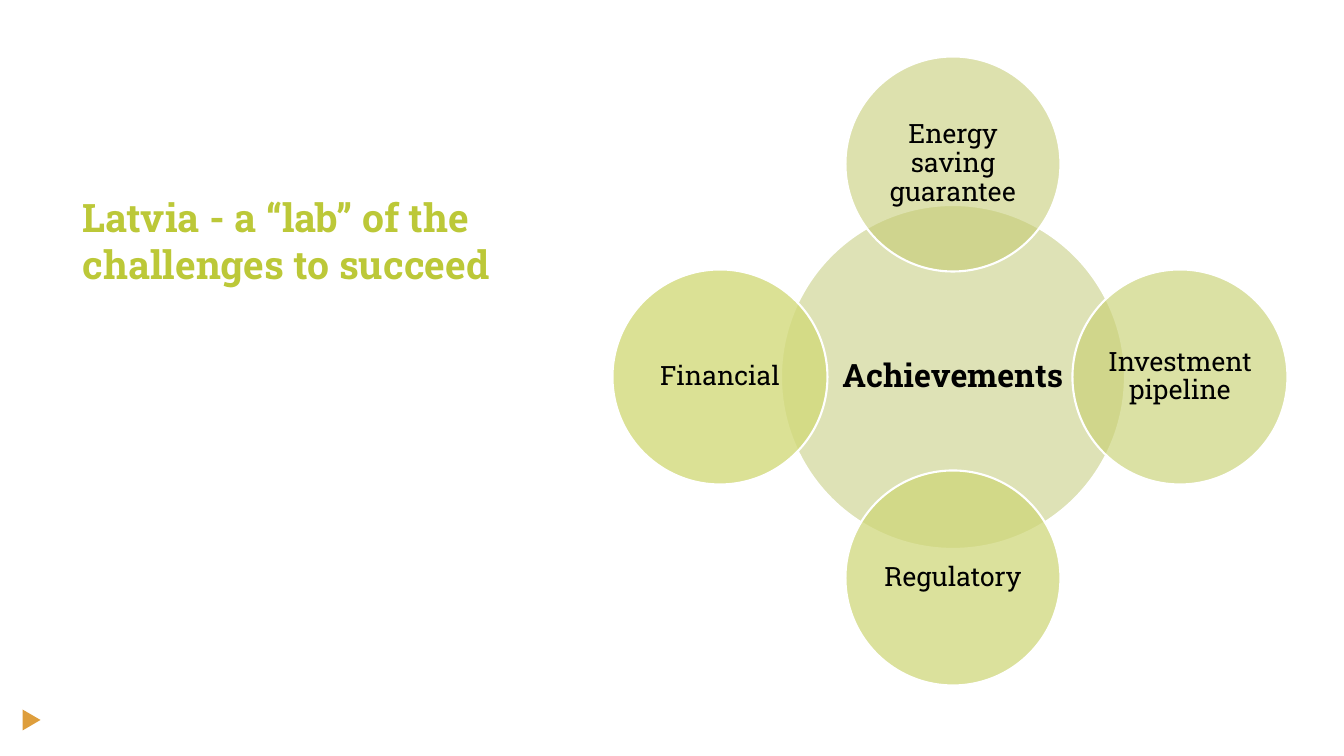
from pptx import Presentation
from pptx.dml.color import RGBColor as RGB
from pptx.enum.shapes import MSO_SHAPE as Geo
from pptx.enum.text import MSO_ANCHOR as Anchor, PP_ALIGN as Align
from pptx.util import Emu, Pt
from lxml.etree import SubElement
from pptx.oxml.ns import qn

WHITE = RGB(0xFF, 0xFF, 0xFF)
BLACK = RGB(0x00, 0x00, 0x00)
LIME = RGB(0xBC, 0xC8, 0x38)
AMBER = RGB(0xDE, 0x9E, 0x3C)
HUB = RGB(0xBF, 0xC6, 0x6F)
TOP = RGB(0xC4, 0xCB, 0x71)
RIGHT = RGB(0xC9, 0xD1, 0x74)
BASE = RGB(0xCE, 0xD6, 0x77)
LEFT = RGB(0xD2, 0xDA, 0x7B)


class Board:
    """Draws styled elements on one slide, with lengths in px."""

    face = "Roboto Slab"
    scale = 12192000 / 1344

    def __init__(self, deck):
        deck.slide_width, deck.slide_height = self.emu(1344, 756)
        self.shapes = deck.slides.add_slide(deck.slide_layouts[6]).shapes

    def emu(self, *sizes):
        return [Emu(round(size * self.scale)) for size in sizes]

    def label(self, frame, text, size, color, bold):
        frame.word_wrap = True
        para = frame.paragraphs[0]
        para.text = text
        font = para.font
        font.name, font.size, font.bold = self.face, Pt(size), bold
        font.color.rgb = color
        return para

    def title(self, text, *box):
        frame = self.shapes.add_textbox(*self.emu(*box)).text_frame
        frame.vertical_anchor = Anchor.BOTTOM
        self.label(frame, text, 28, LIME, True)

    def shape(self, kind, color, *box):
        shape = self.shapes.add_shape(kind, *self.emu(*box))
        shape.shadow.inherit = False
        shape.fill.solid()
        shape.fill.fore_color.rgb = color
        return shape

    def marker(self, *box):
        mark = self.shape(Geo.ISOSCELES_TRIANGLE, AMBER, *box)
        mark.line.fill.background()
        mark.rotation = 90

    def circle(self, text, x, y, width, color, alpha, size=19, bold=False):
        disc = self.shape(Geo.OVAL, color, x - width / 2, y - width / 2, width, width)
        tint = disc.element.spPr.find(qn("a:solidFill"))[0]
        SubElement(tint, qn("a:alpha"), val=str(alpha * 1000))
        disc.line.color.rgb = WHITE
        disc.line.width = Pt(1.5)
        frame = disc.text_frame
        frame.vertical_anchor = Anchor.MIDDLE
        inset = self.emu(3)[0]
        frame.margin_left = frame.margin_right = inset
        frame.margin_top = frame.margin_bottom = inset
        para = self.label(frame, text, size, BLACK, bold)
        para.alignment = Align.CENTER
        para.line_spacing = 0.9


def main():
    deck = Presentation()
    board = Board(deck)
    board.marker(21, 711, 21, 18)
    board.circle("Achievements", 953, 377, 344, HUB, 50, 23, True)
    for text, x, y, color, alpha in (
        ("Energy saving guarantee", 953, 164, TOP, 57),
        ("Investment pipeline", 1180, 377, RIGHT, 65),
        ("Regulatory", 953, 578, BASE, 72),
        ("Financial", 720, 377, LEFT, 80),
    ):
        board.circle(text, x, y, 215, color, alpha)
    board.title("Latvia - a “lab” of the challenges to succeed", 73, 186, 533, 106)
    deck.save("out.pptx")


if __name__ == "__main__":
    main()
